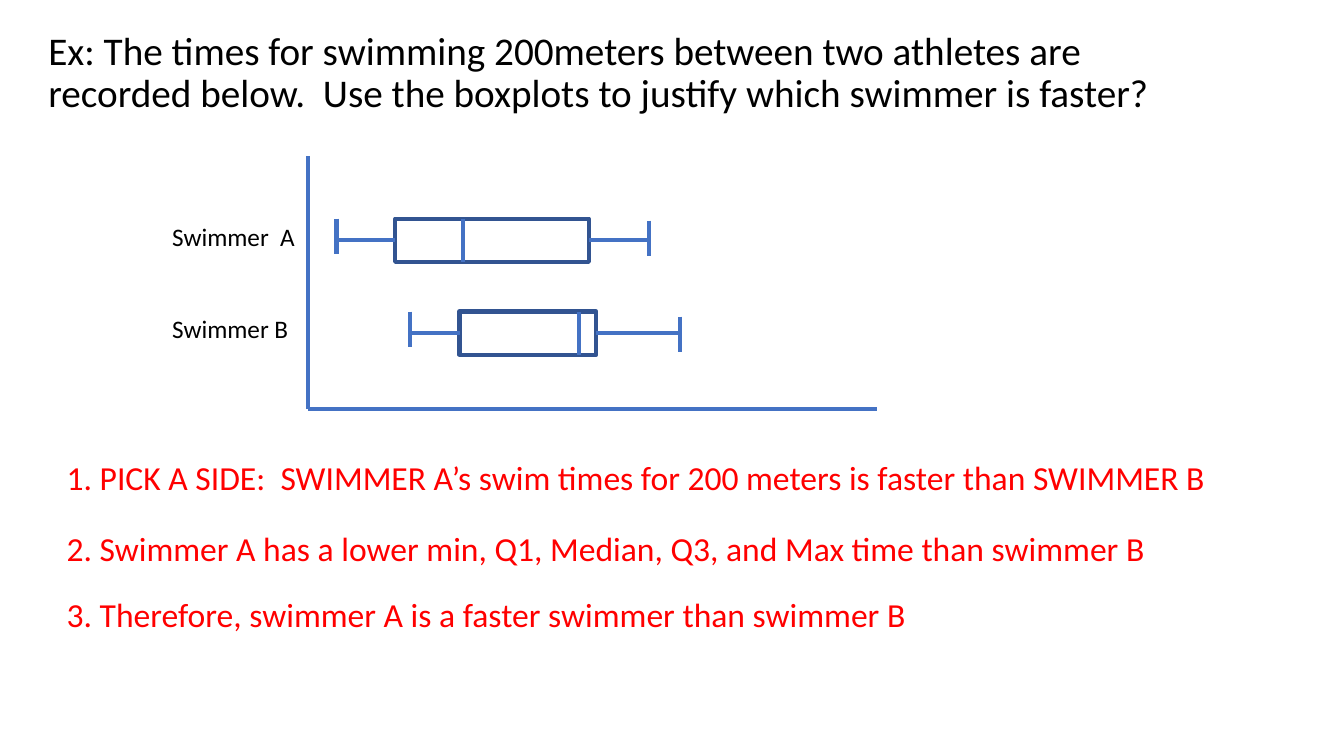
from dataclasses import dataclass

from lxml import etree
from pptx import Presentation
from pptx.dml.color import RGBColor
from pptx.enum.shapes import MSO_CONNECTOR as Connector, MSO_SHAPE as Shape
from pptx.oxml.ns import qn
from pptx.util import Cm, Pt


@dataclass(frozen=True)
class Theme:
    font: str = "Calibri"
    ink: RGBColor = RGBColor(0x00, 0x00, 0x00)
    answer: RGBColor = RGBColor(0xFF, 0x00, 0x00)
    line: RGBColor = RGBColor(0x44, 0x72, 0xC4)
    outline: RGBColor = RGBColor(0x32, 0x54, 0x91)
    stroke: Pt = Pt(3)
    question_size: Pt = Pt(28)
    answer_size: Pt = Pt(24)
    label_size: Pt = Pt(18)


@dataclass(frozen=True)
class Boxplot:
    label: str
    top: float
    low: float
    q1: float
    median: float
    q3: float
    high: float
    high_cap_drop: float


THEME = Theme()
BOX_HEIGHT = 1.09
CAP_HEIGHT = 0.89
AXIS_LEFT, AXIS_TOP, AXIS_RIGHT, AXIS_BOTTOM = 7.77, 3.94, 22.1, 10.31

SWIMMERS = [
    Boxplot("Swimmer  A", 5.51, 8.48, 9.96, 11.66, 14.84, 16.36, 0.05),
    Boxplot("Swimmer B", 7.85, 10.34, 11.58, 14.6, 15.03, 17.14, 0.13),
]
QUESTION = (
    "Ex: The times for swimming 200meters between two athletes are recorded "
    "below.  Use the boxplots to justify which swimmer is faster?"
)
ANSWERS = [
    (11.4, "1. PICK A SIDE:  SWIMMER A’s swim times for 200 meters is faster than SWIMMER B"),
    (13.18, "2. Swimmer A has a lower min, Q1, Median, Q3, and Max time than swimmer B"),
    (14.83, "3. Therefore, swimmer A is a faster swimmer than swimmer B"),
]


def add_text(shapes, text, left, top, width, height, size, color):
    box = shapes.add_textbox(Cm(left), Cm(top), Cm(width), Cm(height))
    box.text_frame.word_wrap = True
    para = box.text_frame.paragraphs[0]
    para.text = text
    font = para.runs[0].font
    font.name, font.size = THEME.font, size
    font.color.rgb = color
    return para


def add_line(shapes, x1, y1, x2, y2):
    line = shapes.add_connector(Connector.STRAIGHT, Cm(x1), Cm(y1), Cm(x2), Cm(y2))
    line.line.color.rgb = THEME.line
    line.line.width = THEME.stroke
    etree.SubElement(line._element.spPr, qn("a:effectLst"))
    return line


def add_boxplot(slide, plot):
    shapes = slide.shapes.add_group_shape().shapes
    middle = plot.top + BOX_HEIGHT / 2

    # Box from Q1 to Q3, with the median
    box = shapes.add_shape(Shape.RECTANGLE, Cm(plot.q1), Cm(plot.top),
                           Cm(plot.q3 - plot.q1), Cm(BOX_HEIGHT))
    box.shadow.inherit = False
    box.fill.background()
    box.line.color.rgb = THEME.outline
    box.line.width = THEME.stroke
    add_line(shapes, plot.median, plot.top, plot.median, plot.top + BOX_HEIGHT)

    # Whiskers joined to the box sides, with end caps
    whiskers = [(plot.low, plot.q1, 1, plot.top),
                (plot.high, plot.q3, 3, plot.top + plot.high_cap_drop)]
    for tip, quartile, side, cap_top in whiskers:
        add_line(shapes, tip, middle, quartile, middle).end_connect(box, side)
        add_line(shapes, tip, cap_top, tip, cap_top + CAP_HEIGHT)

    add_text(slide.shapes, plot.label, 4.09, plot.top - 0.07, 3.76, 1.02,
             THEME.label_size, THEME.ink)


def main():
    deck = Presentation()
    deck.slide_width, deck.slide_height = Cm(33.87), Cm(19.05)
    page = deck.slides.add_slide(deck.slide_layouts[6])

    # Question
    para = add_text(page.shapes, QUESTION, 0.97, 0.66, 30.18, 3.1,
                    THEME.question_size, THEME.ink)
    para.line_spacing = 0.9
    para.space_before = Pt(10)

    # Boxplots and axes
    for plot in SWIMMERS:
        add_boxplot(page, plot)
    add_line(page.shapes, AXIS_LEFT, AXIS_BOTTOM, AXIS_RIGHT, AXIS_BOTTOM)
    add_line(page.shapes, AXIS_LEFT, AXIS_BOTTOM, AXIS_LEFT, AXIS_TOP)

    # Answers
    for top, text in ANSWERS:
        add_text(page.shapes, text, 1.43, top, 30.56, 1.27,
                 THEME.answer_size, THEME.answer)

    deck.save("out.pptx")


if __name__ == "__main__":
    main()
